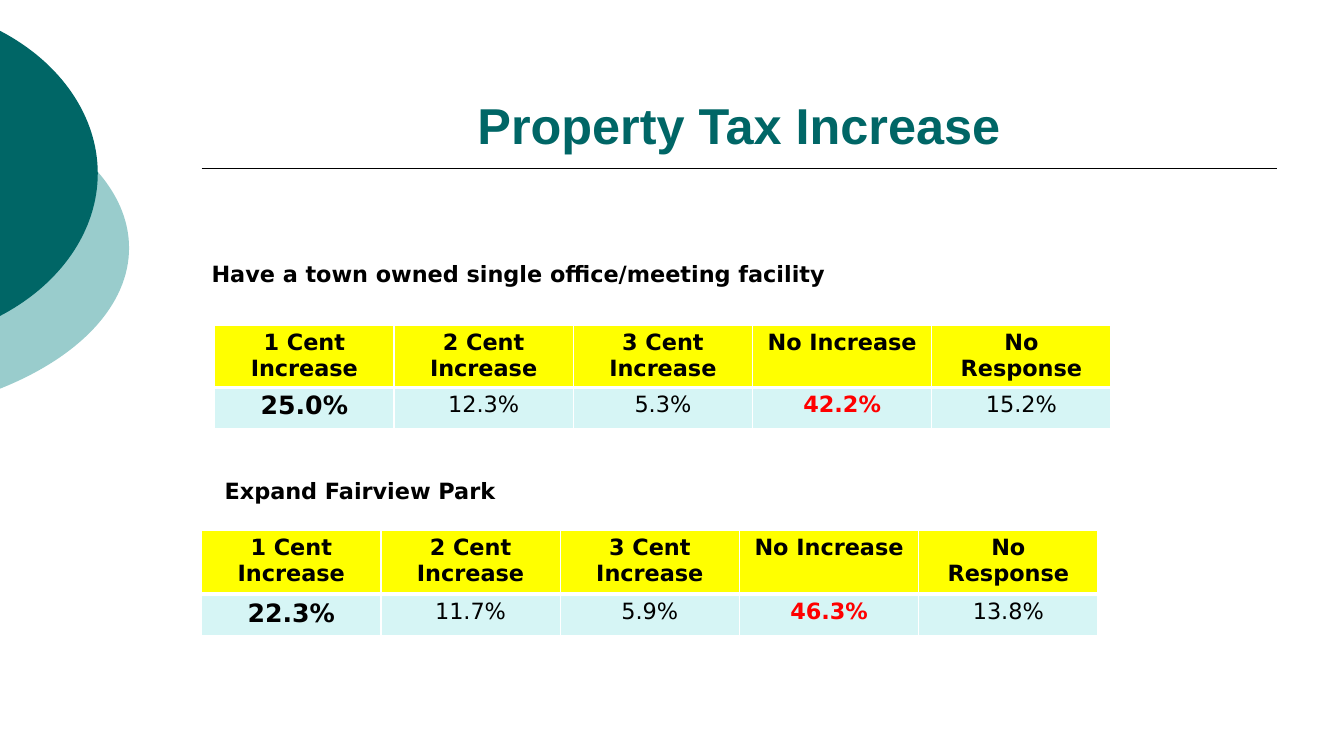
from lxml import etree
from pptx import Presentation
from pptx.dml.color import RGBColor
from pptx.enum import shapes, text
from pptx.oxml import ns
from pptx.util import Inches, Pt

TEAL = RGBColor(0x00, 0x66, 0x66)
PALE_TEAL = RGBColor(0x99, 0xCC, 0xCC)
YELLOW = RGBColor(0xFF, 0xFF, 0x00)
ICE = RGBColor(0xD6, 0xF5, 0xF5)
RED = RGBColor(0xFF, 0x00, 0x00)
BLACK = RGBColor(0x00, 0x00, 0x00)
BODY_FONT = "DejaVu Sans"

prs = Presentation()
prs.slide_width, prs.slide_height = Inches(13.33), Inches(7.5)
slide = prs.slides.add_slide(prs.slide_layouts[6])


def write(frame, wording, align=text.PP_ALIGN.LEFT, **font_values):
    paragraph = frame.paragraphs[0]
    paragraph.alignment = align
    run = paragraph.add_run()
    run.text = wording
    values = {"name": BODY_FONT, "size": Pt(16), "bold": True} | font_values
    run.font.color.rgb = values.pop("color", BLACK)
    for attribute, value in values.items():
        setattr(run.font, attribute, value)


def add_border(cell, index, edge, width):
    line = etree.Element(ns.qn(f"a:{edge}"), w=str(Pt(width)))
    fill = etree.SubElement(line, ns.qn("a:solidFill"))
    etree.SubElement(fill, ns.qn("a:srgbClr"), val="FFFFFF")
    cell._tc.get_or_add_tcPr().insert(index, line)


# Discs cut off by the left edge: a frame, and two mirrored cubic curves inside it
discs = [
    (PALE_TEAL, (-4.72, 0.75, 6, 3.42), [(-0.01, 1.06), (0.8, 1.38), (1.28, 1.9), (1.28, 2.46)]),
    (TEAL, (-3.54, 0, 4.51, 3.45), [(-0.01, 0.3), (0.61, 0.62), (0.97, 1.16), (0.97, 1.72)]),
]
for color, (left, top, width, height), upper in discs:
    right, bottom = left + width, top + height
    builder = slide.shapes.build_freeform(Inches(left), Inches(top))
    builder.add_line_segments(
        [(Inches(x), Inches(y)) for x, y in ((right, top), (right, bottom), (left, bottom))])
    disc = builder.convert_to_shape()
    disc.shadow.inherit = False
    disc.fill.solid()
    disc.fill.fore_color.rgb = color
    disc.line.fill.background()

    middle = upper[-1][1]
    lower = [(x, 2 * middle - y) for x, y in reversed(upper[:-1])]
    outline = next(disc._element.iter(ns.qn("a:path")))
    for segment in list(outline):
        outline.remove(segment)
    for command, points in (("moveTo", upper[:1]), ("cubicBezTo", upper[1:]),
                            ("cubicBezTo", lower), ("close", [])):
        segment = etree.SubElement(outline, ns.qn(f"a:{command}"))
        for x, y in points:
            etree.SubElement(segment, ns.qn("a:pt"),
                             x=str(Inches(x - left)), y=str(Inches(y - top)))

# Rule under the title
rule = slide.shapes.add_connector(
    shapes.MSO_CONNECTOR.STRAIGHT, Inches(2), Inches(1.67), Inches(12.67), Inches(1.67))
rule.line.color.rgb = BLACK
rule.line.width = Pt(1)
etree.SubElement(rule._element.spPr, ns.qn("a:effectLst"))

# Title
title = slide.shapes.add_textbox(Inches(2), Inches(0.33), Inches(10.66), Inches(1.25)).text_frame
title.word_wrap = True
title.vertical_anchor = text.MSO_ANCHOR.BOTTOM
write(title, "Property Tax Increase", text.PP_ALIGN.CENTER,
      name="Arial", size=Pt(36), color=TEAL)

# Survey questions: heading box, its top inset, table corner, header height and inset, shares
answers = ["1 Cent Increase", "2 Cent Increase", "3 Cent Increase", "No Increase", "No Response"]
questions = [
    ("Have a town owned single office/meeting facility", (2, 2, 10.66, 4.5), 0.58,
     (2.13, 3.23), 0.6, 0.04, ["25.0%", "12.3%", "5.3%", "42.2%", "15.2%"]),
    ("Expand Fairview Park", (2.13, 4.68, 6.59, 0.37), 0.05,
     (2, 5.26), 0.62, 0.05, ["22.3%", "11.7%", "5.9%", "46.3%", "13.8%"]),
]
share_formats = [{"size": Pt(18)}, {"bold": False}, {"bold": False}, {"color": RED}, {"bold": False}]
# Border widths: left, right, top, bottom
row_styles = [(YELLOW, (1, 1, 1, 3), [{}] * len(answers)), (ICE, (1, 1, 3, 1), share_formats)]

for question, box, top_inset, corner, header_height, header_inset, shares in questions:
    heading = slide.shapes.add_textbox(*map(Inches, box)).text_frame
    heading.word_wrap = True
    heading.margin_top = Inches(top_inset)
    write(heading, question)

    results = slide.shapes.add_table(
        2, len(answers), *map(Inches, corner), Inches(8.89), Inches(header_height + 0.41)).table
    results.rows[0].height = Inches(header_height)
    results.rows[1].height = Inches(0.41)
    for r, (wordings, (fill, widths, formats)) in enumerate(zip((answers, shares), row_styles)):
        for c, (wording, font_values) in enumerate(zip(wordings, formats)):
            cell = results.cell(r, c)
            cell.margin_top = cell.margin_bottom = Inches(header_inset)
            cell.fill.solid()
            cell.fill.fore_color.rgb = fill
            for index, (edge, width) in enumerate(zip(("lnL", "lnR", "lnT", "lnB"), widths)):
                add_border(cell, index, edge, width)
            write(cell.text_frame, wording, text.PP_ALIGN.CENTER, **font_values)

prs.save("out.pptx")
